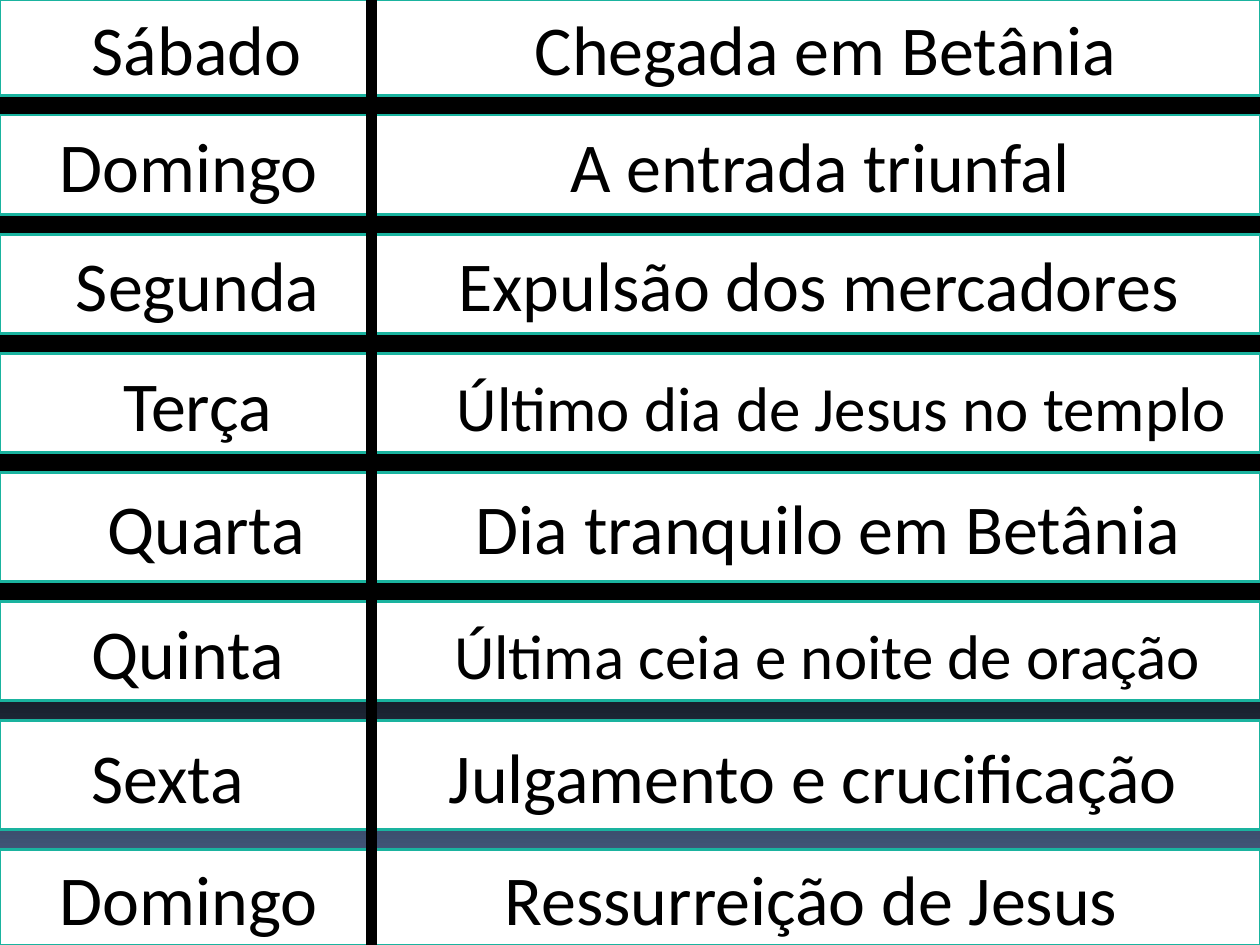
from copy import deepcopy

from lxml.etree import SubElement
from pptx import Presentation
from pptx.dml.color import RGBColor
from pptx.enum.shapes import MSO_CONNECTOR as Connector, MSO_SHAPE as Shape
from pptx.enum.text import MSO_ANCHOR as Anchor, PP_ALIGN as Align
from pptx.oxml.ns import qn
from pptx.util import Pt

WIDTH, HEIGHT = 720, 540
DIVIDER_X = 212.4

# day, day x, event, event x, event size, row height
WEEK = [
    ("Sábado", 52.4, "Chegada em Betânia", 305.7, 40, 54.7),
    ("Domingo", 34.3, "A entrada triunfal", 326, 40, 56.9),
    ("Segunda", 43.4, "Expulsão dos mercadores", 262, 40, 56.9),
    ("Terça", 70.5, "Último dia de Jesus no templo", 261, 36, 56.9),
    ("Quarta", 61.4, "Dia tranquilo em Betânia", 272, 40, 62.6),
    ("Quinta", 52.4, "Última ceia e noite de oração", 259.5, 36, 56.9),
    ("Sexta", 52.4, "Julgamento e crucificação", 256.5, 40, 62.6),
    ("Domingo", 34.3, "Ressurreição de Jesus", 288.5, 40, 54.7),
]


def color(hex_value):
    return RGBColor.from_string(hex_value)


def set_format(target, values):
    for name, value in values.items():
        setattr(target, name, value)


def paint_background(slide):
    fill = slide.background.fill
    fill.gradient()
    fill.gradient_angle = 270
    stop_list = next(slide.element.iter(qn("a:gsLst")))
    stop_list.append(deepcopy(stop_list[-1]))
    stops = [(0, "000000"), (0.65, "000000"), (1, "5B77A8")]
    for stop, (position, shade) in zip(fill.gradient_stops, stops):
        stop.position = position
        stop.color.rgb = color(shade)


def add_day_row(slide, left, top, width, height, day, day_x, event, event_x, event_size):
    row = slide.shapes.add_shape(Shape.RECTANGLE, Pt(left), Pt(top), Pt(width), Pt(height))
    row.shadow.inherit = False
    row.fill.solid()
    row.fill.fore_color.rgb = color("FFFFFF")
    row.line.color.rgb = color("1AB39F")
    row.line.width = Pt(1.5)

    # The inset places the day, a tab stop places the event
    set_format(row.text_frame, {
        "word_wrap": True, "vertical_anchor": Anchor.MIDDLE, "margin_left": Pt(day_x),
    })
    entry = row.text_frame.paragraphs[0]
    entry.alignment = Align.LEFT
    tabs = SubElement(entry._p.get_or_add_pPr(), qn("a:tabLst"))
    SubElement(tabs, qn("a:tab"), pos=str(Pt(event_x - day_x)), algn="l")
    for text, size in ((day + "\t", 40), (event, event_size)):
        run = entry.add_run()
        run.text = text
        set_format(run.font, {"name": "Calibri", "size": Pt(size)})
        run.font.color.rgb = color("000000")


def add_week(slide, left, top, width, height):
    gap = (height - sum(row[-1] for row in WEEK)) / (len(WEEK) - 1)
    for *entry, row_height in WEEK:
        add_day_row(slide, left, top, width, row_height, *entry)
        top += row_height + gap


def add_divider(slide, x, top, height):
    divider = slide.shapes.add_connector(
        Connector.STRAIGHT, Pt(x), Pt(top), Pt(x), Pt(top + height))
    divider.line.color.rgb = color("000000")
    divider.line.width = Pt(6)
    SubElement(divider._element.spPr, qn("a:effectLst"))


def main():
    deck = Presentation()
    set_format(deck, {"slide_width": Pt(WIDTH), "slide_height": Pt(HEIGHT)})
    slide = deck.slides.add_slide(deck.slide_layouts[6])
    paint_background(slide)
    add_week(slide, 0, 0, WIDTH, HEIGHT)
    add_divider(slide, DIVIDER_X, 0, HEIGHT)
    deck.save("out.pptx")


if __name__ == "__main__":
    main()
